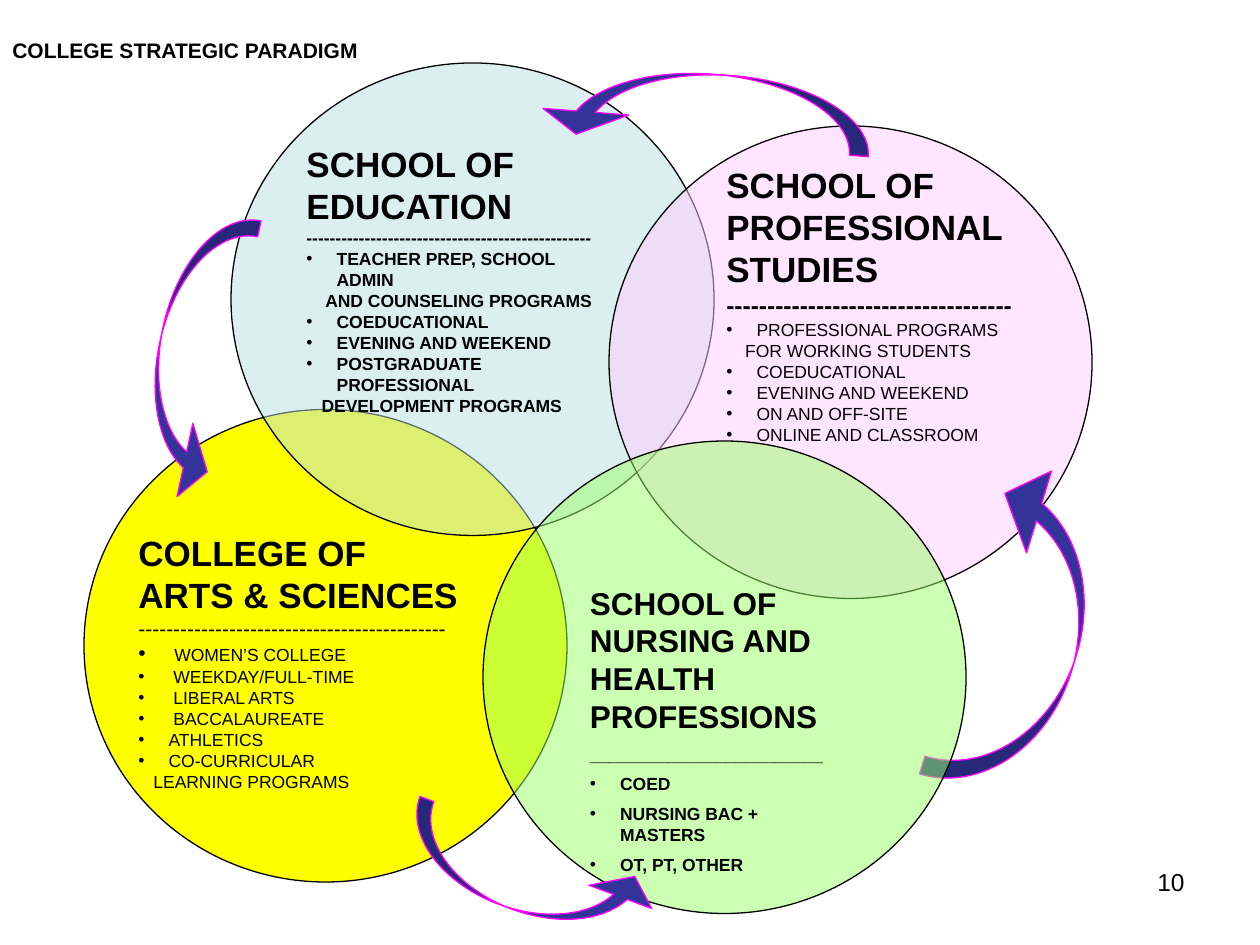
from lxml.etree import SubElement
from pptx import Presentation
from pptx.dml.color import RGBColor
from pptx.enum.shapes import MSO_SHAPE as Preset
from pptx.enum.text import MSO_AUTO_SIZE as AutoSize, PP_ALIGN as Align
from pptx.oxml.ns import qn
from pptx.util import Inches, Pt

COLORS = {
    "black": "000000", "arts": "FFFF00", "education": "BBE0E3",
    "professional": "FFCCFF", "nursing": "99FF66",
    "arrow": "333399", "arrow_edge": "FF00FF",
}

presentation = Presentation()
presentation.slide_width, presentation.slide_height = Inches(10), Inches(7.5)
slide = presentation.slides.add_slide(presentation.slide_layouts[6])
shapes = slide.shapes
UNIT = presentation.slide_width / 120  # grid of 120 columns by 90 rows
CIRCLE = (46, 45)
HANG = Inches(0.24)


def add_preset(preset, box, fill, line="black", opacity=100, rotation=0, adjustments=()):
    shape = shapes.add_shape(preset, *(round(cells * UNIT) for cells in box))
    shape.shadow.inherit = False
    shape.rotation = rotation
    for index, value in enumerate(adjustments):
        shape.adjustments[index] = value
    shape.fill.solid()
    shape.fill.fore_color.rgb = RGBColor.from_string(COLORS[fill])
    if opacity < 100:
        color = shape._element.spPr.find(qn("a:solidFill"))[0]
        SubElement(color, qn("a:alpha")).set("val", str(opacity * 1000))
    shape.line.color.rgb = RGBColor.from_string(COLORS[line])
    shape.line.width = Pt(0.75)


def add_text(box, lines, wrap=True, grow=True, align=Align.LEFT, spaced=False, **defaults):
    """Each line is (text, format); its format overrides the defaults."""
    frame = shapes.add_textbox(*(round(cells * UNIT) for cells in box)).text_frame
    frame.word_wrap = wrap
    frame.auto_size = AutoSize.SHAPE_TO_FIT_TEXT if grow else AutoSize.NONE
    for index, (text, style) in enumerate(lines):
        style = {"size": 10, "bold": False, "bullet": False, "indent": 0} | defaults | style
        paragraph = frame.add_paragraph() if index else frame.paragraphs[0]
        paragraph.alignment = align
        if spaced:
            paragraph.space_before = Pt(style["size"] / 2)
        properties = paragraph._p.get_or_add_pPr()
        if style["bullet"]:
            properties.set("marL", str(HANG))
            properties.set("indent", str(-HANG))
            SubElement(properties, qn("a:buFont")).set("typeface", "Arial")
            SubElement(properties, qn("a:buChar")).set("char", "•")
        elif style["indent"]:
            properties.set("marL", str(Inches(style["indent"])))
        parts = [(text, style["size"])]
        if "lead_size" in style:
            parts.insert(0, (" ", style["lead_size"]))
        for part, size in parts:
            run = paragraph.add_run()
            run.text = part
            run.font.name = "Arial"
            run.font.size = Pt(size)
            run.font.bold = style["bold"]
            run.font.color.rgb = RGBColor.from_string(COLORS["black"])


HEADING = {"size": 20, "bold": True}
BULLET = {"bullet": True}

add_text((86, 82, 28, 6.2), [("10", {"size": 14})], grow=False, align=Align.RIGHT)

# College of Arts & Sciences and School of Education
add_preset(Preset.OVAL, (8, 39, *CIRCLE), "arts")
add_preset(Preset.OVAL, (22, 6, *CIRCLE), "education", opacity=50)
add_text((12, 50, 32.9, 26), [
    ("COLLEGE OF", HEADING),
    ("ARTS & SCIENCES", HEADING),
    ("-" * 44, {"size": 12}),
    ("WOMEN’S COLLEGE", BULLET | {"lead_size": 12}),
    (" WEEKDAY/FULL-TIME", BULLET),
    (" LIBERAL ARTS", BULLET),
    (" BACCALAUREATE", BULLET),
    ("ATHLETICS", BULLET),
    ("CO-CURRICULAR", BULLET),
    ("LEARNING PROGRAMS", {"indent": 0.12}),
], wrap=False)
add_text((28, 13, 30.6, 27.2), [
    ("SCHOOL OF", HEADING),
    ("EDUCATION", HEADING),
    ("-" * 49, {}),
    ("TEACHER PREP, SCHOOL ADMIN", BULLET),
    ("AND COUNSELING PROGRAMS", {"indent": 0.15}),
    ("COEDUCATIONAL", BULLET),
    ("EVENING AND WEEKEND", BULLET),
    ("POSTGRADUATE PROFESSIONAL", BULLET),
    ("DEVELOPMENT PROGRAMS", {"indent": 0.12}),
], bold=True)

# School of Professional Studies
add_preset(Preset.OVAL, (58, 12, *CIRCLE), "professional", opacity=50)
add_text((68, 15, 31, 32), [
    ("SCHOOL OF", HEADING),
    ("PROFESSIONAL", HEADING),
    ("STUDIES", HEADING),
    ("-" * 35, {"size": 14, "bold": True}),
    ("PROFESSIONAL PROGRAMS", BULLET),
    ("FOR WORKING STUDENTS", {"indent": 0.15}),
    ("COEDUCATIONAL", BULLET),
    ("EVENING AND WEEKEND", BULLET),
    ("ON AND OFF-SITE", BULLET),
    ("ONLINE AND CLASSROOM", BULLET),
])

# Arrows between the schools; the last one lies above the nursing circle
*rear_arrows, front_arrow = [
    ((4.5, 30.5, 28, 7), 102.1, (0.22, 1.02, 0.33)),
    ((81.5, 54.5, 32, 11), 286.9, (0.16, 0.74, 0.33)),
    ((51, 7, 32, 6.7), 184.4, (0.27, 1.22, 0.33)),
    ((38, 80, 25, 7), 20.4, (0.2, 0.91, 0.33)),
]
for box, rotation, adjustments in rear_arrows:
    add_preset(Preset.CURVED_UP_ARROW, box, "arrow", "arrow_edge",
               rotation=rotation, adjustments=adjustments)

# School of Nursing and Health Professions
add_preset(Preset.OVAL, (46, 42, *CIRCLE), "nursing", opacity=50)
add_text((55, 55, 25, 27.6), [
    ("SCHOOL OF NURSING AND HEALTH PROFESSIONS", {"size": 18}),
    ("_" * 24, {}),
    ("COED", BULLET),
    ("NURSING BAC + MASTERS", BULLET),
    ("OT, PT, OTHER", BULLET),
], bold=True, spaced=True)
box, rotation, adjustments = front_arrow
add_preset(Preset.CURVED_UP_ARROW, box, "arrow", "arrow_edge",
           rotation=rotation, adjustments=adjustments)

add_text((0, 3, 120, 3.6), [("COLLEGE STRATEGIC PARADIGM", {"size": 12, "bold": True})],
         spaced=True)

presentation.save("out.pptx")
